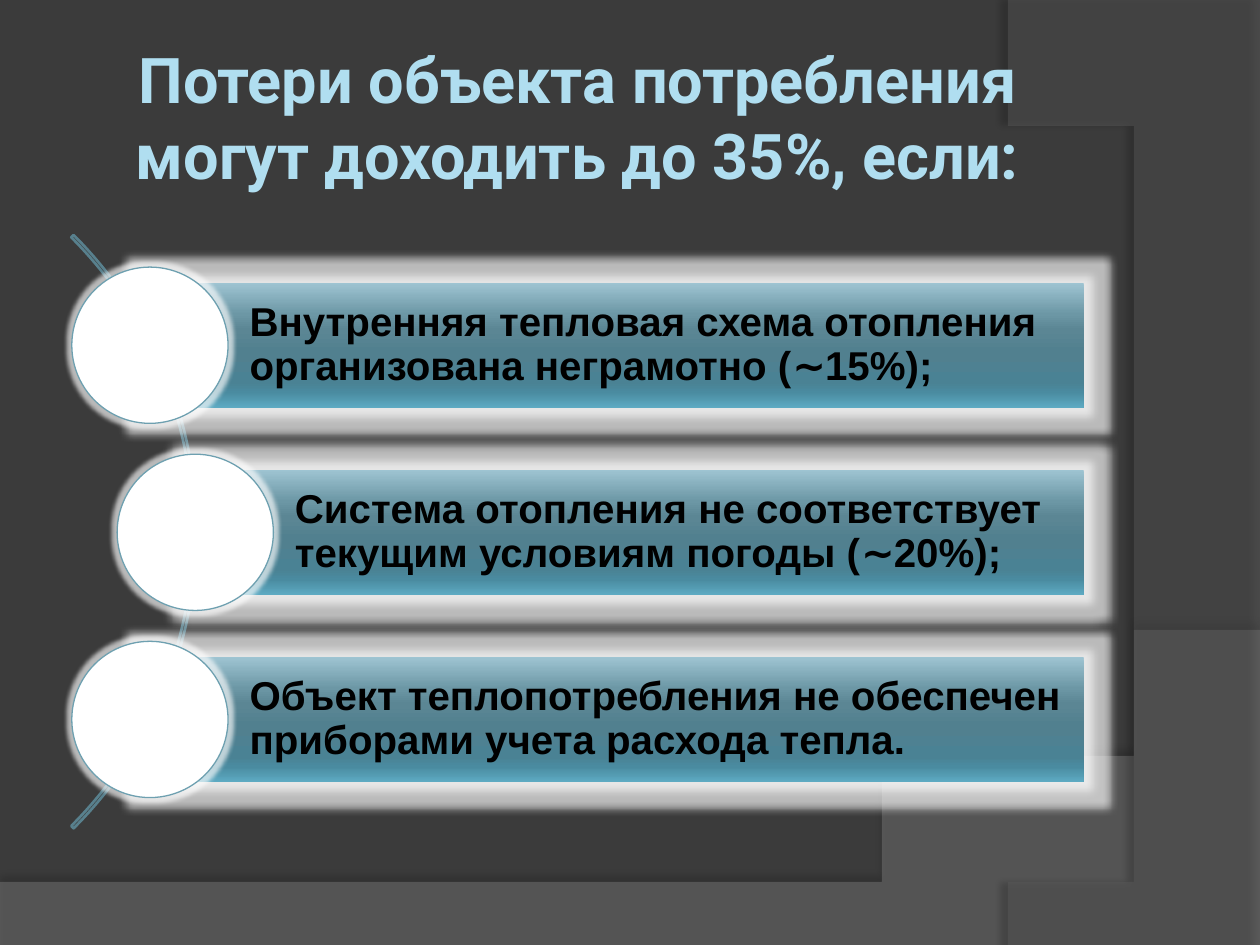
from dataclasses import dataclass

from lxml import etree
from pptx import Presentation
from pptx.dml.color import RGBColor
from pptx.enum import shapes, text
from pptx.oxml import ns
from pptx.util import Inches, Pt


@dataclass(frozen=True)
class Theme:
    background: str = "3B3B3B"
    wave: str = "7F7F7F"
    side: str = "5E5E5E"
    shadow: str = "000000"
    arc: str = "58808D"
    circle: str = "FFFFFF"
    circle_line: str = "6EA0B0"
    glow: str = "FFFFFF"
    item_text: str = "000000"
    title_line: str = "6599AA"
    title_stops: tuple = ((0, "C9E4EF"), (9, "B0DEF0"), (50, "166078"),
                          (79, "B0DEF0"), (100, "C9E4EF"))
    bar_stops: tuple = ((0, "9EC4D2"), (25, "6C97A5"), (38, "5B8694"),
                        (55, "51808F"), (80, "4A8294"), (88, "4A8BA0"),
                        (100, "5DAAC2"))
    title_font: str = "Roboto"
    item_font: str = "Arial"
    title_size: int = 36
    item_size: int = 23


THEME = Theme()
TITLE = "Потери объекта потребления могут доходить до 35%, если:"
ITEMS = (
    "Внутренняя тепловая схема отопления организована неграмотно (∼15%);",
    "Система отопления не соответствует текущим условиям погоды (∼20%);",
    "Объект теплопотребления не обеспечен приборами учета расхода тепла.",
)


def rgb(value):
    return RGBColor.from_string(value)


def add_xml(parent, tag, **attrs):
    return etree.SubElement(parent, ns.qn(tag), {k: str(v) for k, v in attrs.items()})


def add_color(parent, color, alpha=100):
    clr = add_xml(parent, "a:srgbClr", val=color)
    if alpha < 100:
        add_xml(clr, "a:alpha", val=alpha * 1000)
    return clr


def set_gradient(fill, element, stops):
    """Vertical gradient, running from top to bottom."""
    fill.gradient()
    fill.gradient_angle = 270
    gs_list = element.find(".//" + ns.qn("a:gsLst"))
    for stop in list(gs_list):
        gs_list.remove(stop)
    for pos, color in stops:
        add_color(add_xml(gs_list, "a:gs", pos=pos * 1000), color)


def set_effect(s, tag, color, alpha, **attrs):
    s.shadow.inherit = False
    effects = s._element.spPr.find(ns.qn("a:effectLst"))
    add_color(add_xml(effects, tag, **attrs), color, alpha)


def set_frame(tf, insets):
    left, other = insets
    values = {"margin_left": Inches(left), "margin_top": Inches(other),
              "margin_right": Inches(other), "margin_bottom": Inches(other),
              "word_wrap": True, "auto_size": text.MSO_AUTO_SIZE.NONE,
              "vertical_anchor": text.MSO_ANCHOR.MIDDLE}
    for name, value in values.items():
        setattr(tf, name, value)


def add_run(p, words, font, size):
    r = p.add_run()
    r.text = words
    for name, value in {"name": font, "size": Pt(size), "bold": True}.items():
        setattr(r.font, name, value)
    return r


def curve(start, c1, c2, end, steps=60):
    """Points on a cubic Bezier curve, without its start."""
    points = []
    for i in range(1, steps + 1):
        t = i / steps
        u = 1 - t
        weights = (u ** 3, 3 * u * u * t, 3 * u * t * t, t ** 3)
        points.append(tuple(sum(w * pt[axis] for w, pt in zip(weights, (start, c1, c2, end)))
                            for axis in (0, 1)))
    return points


def add_backdrop(slide, points, color, alpha, shadow):
    shadow_alpha, blur, dist, angle = shadow
    builder = slide.shapes.build_freeform(*points[0], scale=Inches(1))
    builder.add_line_segments(points[1:], close=True)
    s = builder.convert_to_shape()
    s.fill.solid()
    s.fill.fore_color.rgb = rgb(color)
    clr = s._element.spPr.find(".//" + ns.qn("a:srgbClr"))
    add_xml(clr, "a:alpha", val=alpha * 1000)
    s.line.fill.background()
    set_effect(s, "a:outerShdw", THEME.shadow, shadow_alpha, blurRad=Pt(blur),
               dist=Pt(dist), dir=angle * 60000, algn="ctr", rotWithShape=0)


def add_title(slide):
    s = slide.shapes.title
    s.left, s.top, s.width, s.height = map(Inches, (0.5, 0.3, 8.17, 1.25))
    set_frame(s.text_frame, (0.05, 0.05))
    p = s.text_frame.paragraphs[0]
    p.alignment = text.PP_ALIGN.CENTER
    r = add_run(p, TITLE, THEME.title_font, THEME.title_size)
    props = r._r.get_or_add_rPr()
    set_gradient(r.font.fill, props, THEME.title_stops)
    outline = add_xml(props, "a:ln", w=Pt(0.83))
    add_color(add_xml(outline, "a:solidFill"), THEME.title_line)
    props.insert(0, outline)


def add_arc(slide):
    s = slide.shapes.add_shape(shapes.MSO_SHAPE.BLOCK_ARC,
                               *map(Inches, (-5.1, 0.89, 6.66, 6.66)))
    for i, value in enumerate((189, 27, 0.004)):
        s.adjustments[i] = value
    s.shadow.inherit = False
    s.fill.background()
    s.line.color.rgb = rgb(THEME.arc)
    s.line.width = Pt(1.5)


def add_bar(slide, left, top, right, height, words):
    s = slide.shapes.add_shape(shapes.MSO_SHAPE.RECTANGLE,
                               *map(Inches, (left, top, right - left, height)))
    set_gradient(s.fill, s._element.spPr, THEME.bar_stops)
    s.line.fill.background()
    set_effect(s, "a:glow", THEME.glow, 65, rad=Pt(10))
    set_frame(s.text_frame, (0.79, 0.06))
    p = s.text_frame.paragraphs[0]
    p.alignment = text.PP_ALIGN.LEFT
    p.line_spacing = 0.9
    r = add_run(p, words, THEME.item_font, THEME.item_size)
    r.font.color.rgb = rgb(THEME.item_text)


def add_circle(slide, center_x, center_y, size):
    s = slide.shapes.add_shape(
        shapes.MSO_SHAPE.OVAL,
        *map(Inches, (center_x - size / 2, center_y - size / 2, size, size)))
    s.fill.solid()
    s.fill.fore_color.rgb = rgb(THEME.circle)
    s.line.color.rgb = rgb(THEME.circle_line)
    s.line.width = Pt(0.75)
    set_effect(s, "a:glow", THEME.glow, 65, rad=Pt(5))


def main():
    prs = Presentation()
    prs.slide_width, prs.slide_height = Inches(10), Inches(7.5)
    slide = prs.slides.add_slide(prs.slide_layouts[5])
    slide.background.fill.solid()
    slide.background.fill.fore_color.rgb = rgb(THEME.background)

    # Backdrop: the wave at the bottom and the curved panel at the right
    wave = [(0, 7.05), (0, 7.51), (10, 7.51), (10, 5.2)]
    wave += curve(wave[-1], (5.59, 7.29), (3.91, 7.19), wave[0])
    add_backdrop(slide, wave, THEME.wave, 45, (35, 4, 3.5, 270))
    side = [(10, 0.02), (10, 7.5), (8.21, 7.5)]
    side += curve(side[-1], (9.35, 6.19), (10.18, 3), (8, 0))
    add_backdrop(slide, side, THEME.side, 40, (45, 4, 4, 180))

    # Title, moved in front of the backdrop
    add_title(slide)
    slide.shapes._spTree.append(slide.shapes.title._element)

    # Curved list: equal steps down, the middle item pushed right along the arc
    add_arc(slide)
    first_y, step, bar_height = 2.74, 1.485, 0.99
    for i, words in enumerate(ITEMS):
        center_x = 1.55 if i == 1 else 1.19
        center_y = first_y + i * step
        add_bar(slide, center_x, center_y - bar_height / 2, 8.6, bar_height, words)
        add_circle(slide, center_x, center_y, 1.24)

    prs.save("out.pptx")


if __name__ == "__main__":
    main()
